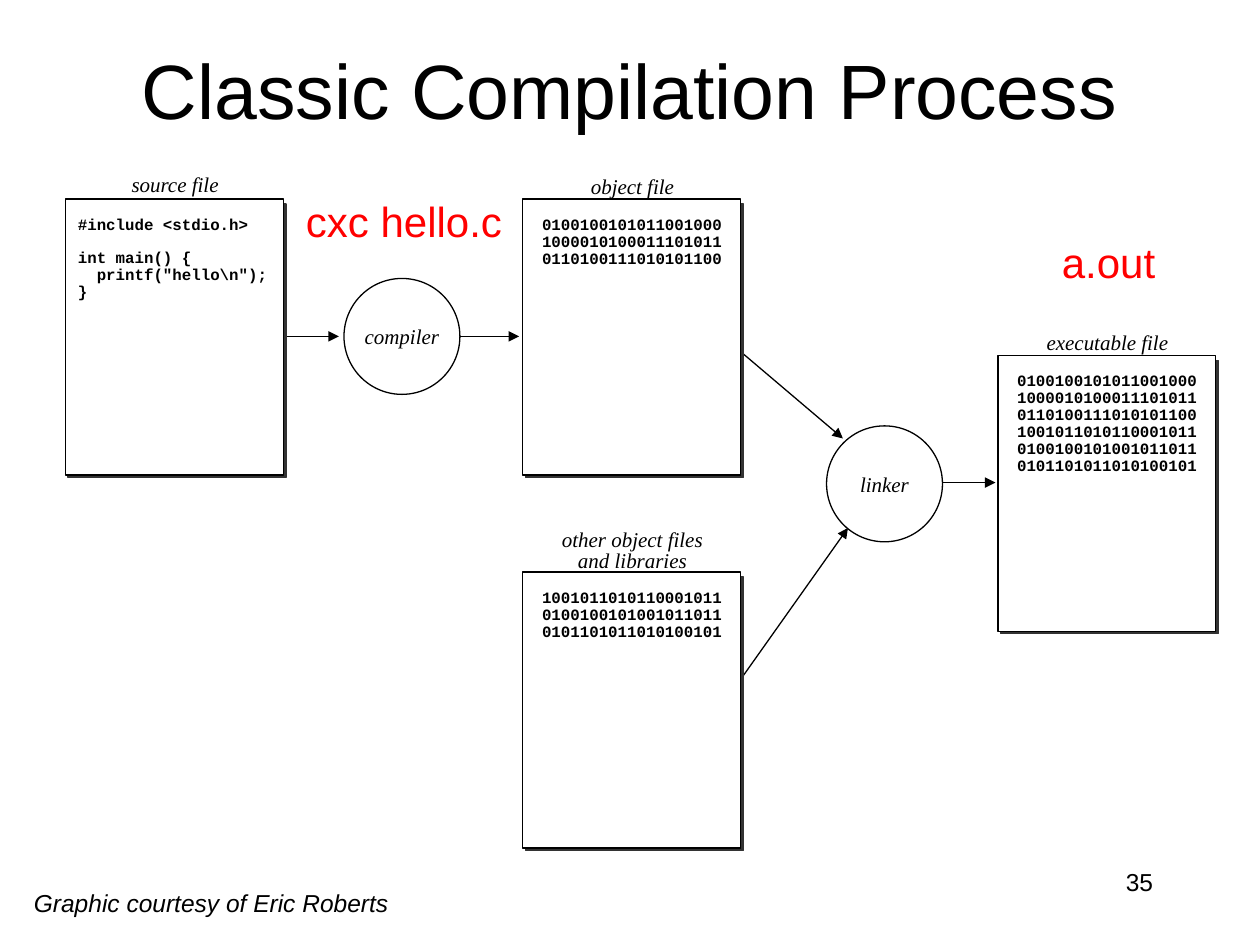
"""Build a slide showing the classic compilation process from source to executable."""
from dataclasses import dataclass

import pptx
import pptx.dml.color
import pptx.enum.shapes
import pptx.enum.text
import pptx.oxml
import pptx.util
from pptx.util import Inches

Color = pptx.dml.color.RGBColor.from_string
Shape = pptx.enum.shapes.MSO_SHAPE
Align = pptx.enum.text.PP_ALIGN
Anchor = pptx.enum.text.MSO_ANCHOR


@dataclass(frozen=True)
class Theme:
    ink = Color("000000")
    paper = Color("FFFFFF")
    shade = Color("333333")
    accent = Color("FF0000")
    line = pptx.util.Pt(0.75)
    title = ("Arial", 44, ink, False, False)
    command = ("Arial", 24, accent, False, False)
    credit = ("Arial", 14, ink, False, True)
    number = ("Arial", 14, ink, False, False)
    label = ("Times New Roman", 12, ink, False, True)
    code = ("Courier New", 9, ink, True, False)


def write(shape, lines, style, align=Align.CENTER, spacing=None, anchor=Anchor.TOP, wrap=True):
    frame = shape.text_frame
    frame.word_wrap = wrap
    frame.vertical_anchor = anchor
    name, size, color, bold, italic = style
    for index, line in enumerate(lines):
        para = frame.paragraphs[0] if index == 0 else frame.add_paragraph()
        para.alignment = align
        para.line_spacing = spacing
        span = para.add_run()
        span.text = line
        span.font.name = name
        span.font.size = pptx.util.Pt(size)
        span.font.color.rgb = color
        span.font.bold = bold
        span.font.italic = italic
    return frame.paragraphs


def draw(page, kind, left, top, width, height, fill, outline):
    shape = page.shapes.add_shape(kind, Inches(left), Inches(top), Inches(width), Inches(height))
    shape.shadow.inherit = False
    shape.fill.solid()
    shape.fill.fore_color.rgb = fill
    shape.line.color.rgb = outline
    shape.line.width = Theme.line
    return shape


deck = pptx.Presentation()
deck.slide_width = Inches(10)
deck.slide_height = Inches(7.5)
page = deck.slides.add_slide(deck.slide_layouts[6])

arrows = [
    (2.21, 2.67, 2.69, 2.67),
    (3.58, 2.67, 4.12, 2.67),
    (5.83, 2.75, 6.69, 3.48),
    (5.83, 5.46, 6.73, 4.19),
    (7.42, 3.83, 7.9, 3.83),
]
for ends in arrows:
    arrow = page.shapes.add_connector(
        pptx.enum.shapes.MSO_CONNECTOR.STRAIGHT, *[Inches(end) for end in ends])
    arrow.line.color.rgb = Theme.ink
    arrow.line.width = Theme.line
    outline = arrow.line._get_or_add_ln()
    outline.append(pptx.oxml.parse_xml(
        '<a:tailEnd xmlns:a="http://schemas.openxmlformats.org/drawingml/2006/main" type="triangle"/>'))
    outline.addnext(pptx.oxml.parse_xml(
        '<a:effectLst xmlns:a="http://schemas.openxmlformats.org/drawingml/2006/main"/>'))

source = ["#include <stdio.h>", "int main() {", 'printf("hello\\n");', "}"]
main_bits = ["0100100101011001000", "1000010100011101011", "0110100111010101100"]
library_bits = ["1001011010110001011", "0100100101001011011", "0101101011010100101"]
files = [
    (0.52, 1.58, 1.31, ["source file"], source, Align.LEFT),
    (4.15, 1.58, 1.33, ["object file"], main_bits, Align.CENTER),
    (4.15, 4.54, 4.16, ["other object files", "and libraries"], library_bits, Align.CENTER),
    (7.92, 2.82, 2.57, ["executable file"], main_bits + library_bits, Align.CENTER),
]
for left, top, label_top, label, content, align in files:
    draw(page, Shape.RECTANGLE, left + 0.02, top + 0.04, 1.73, 2.17, Theme.shade, Theme.shade)
    draw(page, Shape.RECTANGLE, left, top, 1.73, 2.19, Theme.paper, Theme.ink)
    box = page.shapes.add_textbox(Inches(left), Inches(top + 0.09), Inches(1.73), Inches(1.06))
    paras = write(box, content, Theme.code, align, 0.9)
    if content is source:
        paras[0].space_after = pptx.util.Pt(9.2)
        paras[2]._p.get_or_add_pPr().set("marL", str(Inches(0.15)))
    box = page.shapes.add_textbox(
        Inches(left + 0.07), Inches(label_top), Inches(1.6), Inches(0.3))
    write(box, label, Theme.label, spacing=0.85 if len(label) > 1 else None)

for left, top, name in [(2.73, 2.21, "compiler"), (6.56, 3.38, "linker")]:
    circle = draw(page, Shape.OVAL, left, top, 0.92, 0.92, Theme.paper, Theme.ink)
    write(circle, [name], Theme.label, anchor=Anchor.MIDDLE, wrap=False)

captions = [
    (0, 0.08, 10, 1.25, "Classic Compilation Process", Theme.title, Align.CENTER, Anchor.MIDDLE, True),
    (2.33, 1.5, 1.79, 0.51, "cxc hello.c", Theme.command, Align.LEFT, Anchor.TOP, False),
    (8.33, 1.83, 0.96, 0.51, "a.out", Theme.command, Align.LEFT, Anchor.TOP, False),
    (0.17, 7, 4.08, 0.34, "Graphic courtesy of Eric Roberts", Theme.credit, Align.LEFT, Anchor.TOP, True),
    (7.17, 6.83, 2.08, 0.5, "35", Theme.number, Align.RIGHT, Anchor.TOP, True),
]
for left, top, width, height, words, style, align, anchor, wrap in captions:
    box = page.shapes.add_textbox(Inches(left), Inches(top), Inches(width), Inches(height))
    write(box, [words], style, align, anchor=anchor, wrap=wrap)

deck.save("out.pptx")
